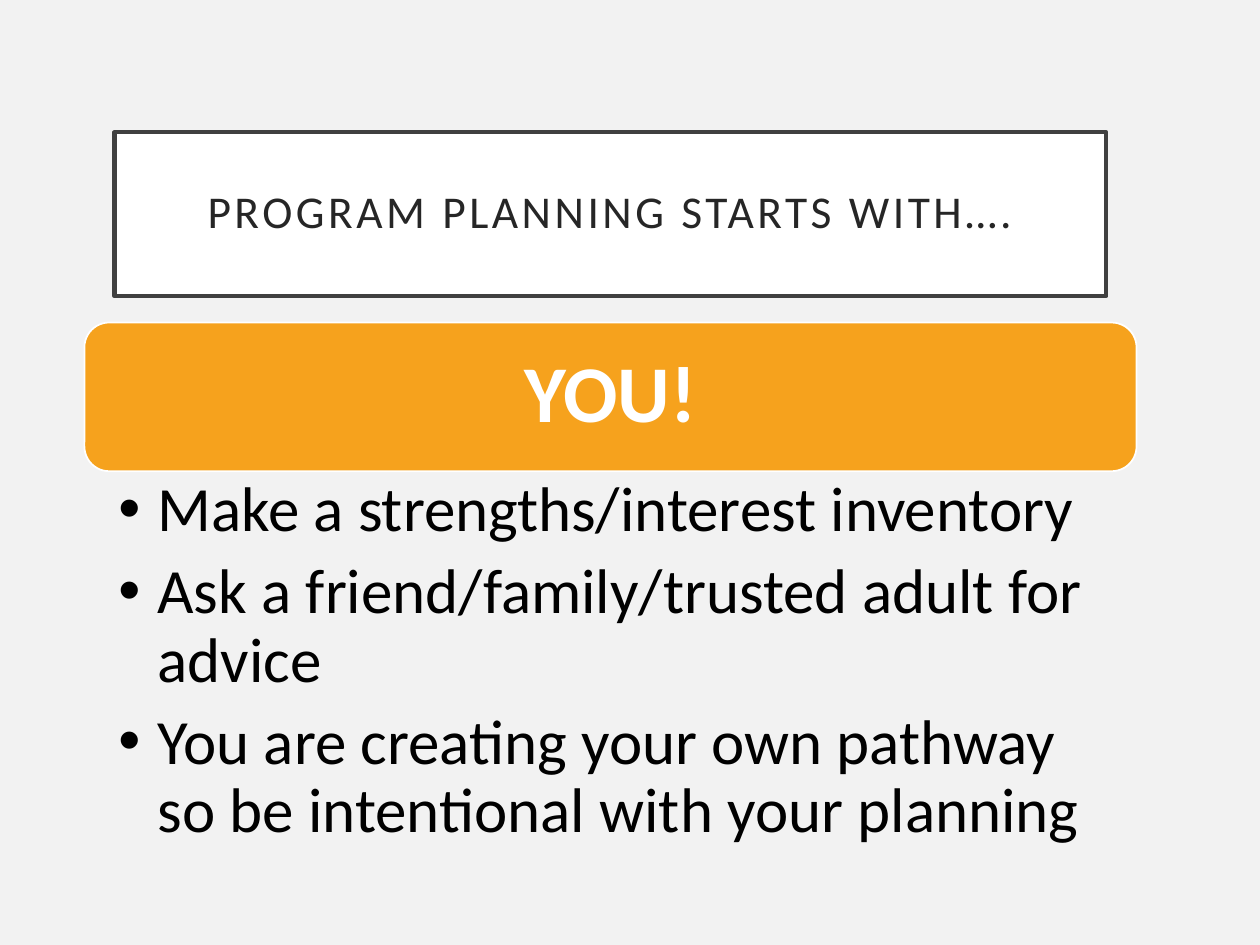
from lxml import etree
from pptx import Presentation
from pptx.dml.color import RGBColor
from pptx.enum.shapes import MSO_SHAPE
from pptx.enum.text import MSO_ANCHOR, MSO_AUTO_SIZE, PP_ALIGN
from pptx.oxml.ns import qn
from pptx.util import Inches, Pt

ROUNDED = MSO_SHAPE.ROUNDED_RECTANGLE
MIDDLE, TOP = MSO_ANCHOR.MIDDLE, MSO_ANCHOR.TOP
NO_AUTOFIT = MSO_AUTO_SIZE.NONE
CENTER, LEFT = PP_ALIGN.CENTER, PP_ALIGN.LEFT
TITLE_ONLY = 5

TITLE = "PROGRAM PLANNING STARTS WITH…."
ANSWER = "YOU!"
STEPS = [
    "Make a strengths/interest inventory",
    "Ask a friend/family/trusted adult for advice",
    "You are creating your own pathway so be intentional with your planning",
]


def color(hex_code):
    """Return the colour for a hex string."""
    return RGBColor.from_string(hex_code)


def set_all(target, values):
    """Set each attribute of target from a dict."""
    for key, value in values.items():
        setattr(target, key, value)


def place(part, box):
    """Move a part to a left, top, width, height box in inches."""
    set_all(part, dict(zip(("left", "top", "width", "height"), map(Inches, box))))


def paint(part, fill, line, width):
    """Give a part a solid fill and outline."""
    part.fill.solid()
    part.fill.fore_color.rgb = color(fill)
    part.line.color.rgb = color(line)
    part.line.width = Pt(width)


def set_frame(frame, anchor, insets):
    """Set wrapping, anchor and left, top, right, bottom insets."""
    sides = ("margin_left", "margin_top", "margin_right", "margin_bottom")
    set_all(frame, {"word_wrap": True, "auto_size": NO_AUTOFIT, "vertical_anchor": anchor})
    set_all(frame, dict(zip(sides, map(Inches, insets))))


def write(paragraph, text, size, hex_code, align, bold=False):
    """Write one formatted run and return it."""
    set_all(paragraph, {"alignment": align, "line_spacing": 0.9, "space_before": Pt(0)})
    run = paragraph.add_run()
    run.text = text
    set_all(run.font, {"name": "Calibri", "size": Pt(size), "bold": bold})
    run.font.color.rgb = color(hex_code)
    return run


def add_bullet(paragraph, indent):
    """Add a round bullet with a hanging indent in inches."""
    properties = paragraph._p.get_or_add_pPr()
    properties.set("marL", str(Inches(indent)))
    properties.set("indent", str(-Inches(indent)))
    etree.SubElement(properties, qn("a:buFont")).set("typeface", "Arial")
    etree.SubElement(properties, qn("a:buChar")).set("char", "•")


def build_title(slide, box):
    """Format the title placeholder as a framed heading."""
    title = slide.shapes.title
    place(title, box)
    paint(title, "FFFFFF", "404040", 2.5)
    set_frame(title.text_frame, MIDDLE, [0.2] * 4)
    run = write(title.text_frame.paragraphs[0], TITLE, 26, "262626", CENTER)
    run._r.get_or_add_rPr().set("spc", "200")


def build_answer(slide, box):
    """Add the rounded banner that answers the title."""
    banner = slide.shapes.add_shape(ROUNDED, *map(Inches, box))
    banner.shadow.inherit = False
    paint(banner, "F6A21D", "FFFFFF", 1)
    set_frame(banner.text_frame, MIDDLE, [0.19] * 4)
    write(banner.text_frame.paragraphs[0], ANSWER, 46, "FFFFFF", CENTER, bold=True)


def build_steps(slide, box):
    """Add the bulleted planning steps."""
    frame = slide.shapes.add_textbox(*map(Inches, box)).text_frame
    set_frame(frame, TOP, (0.27, 0.06, 0.36, 0.06))
    for index, step in enumerate(STEPS):
        paragraph = frame.add_paragraph() if index else frame.paragraphs[0]
        add_bullet(paragraph, 0.31)
        write(paragraph, step, 36, "000000", LEFT)
        paragraph.space_after = Pt(8)


def main():
    """Build and save the slide."""
    deck = Presentation()
    set_all(deck, {"slide_width": Inches(10), "slide_height": Inches(7.5)})
    slide = deck.slides.add_slide(deck.slide_layouts[TITLE_ONLY])
    slide.background.fill.solid()
    slide.background.fill.fore_color.rgb = color("F2F2F2")
    build_title(slide, (0.91, 1.05, 7.87, 1.3))
    build_answer(slide, (0.67, 2.56, 8.35, 1.18))
    build_steps(slide, (0.67, 3.73, 8.35, 3.02))
    deck.save("out.pptx")


if __name__ == "__main__":
    main()
